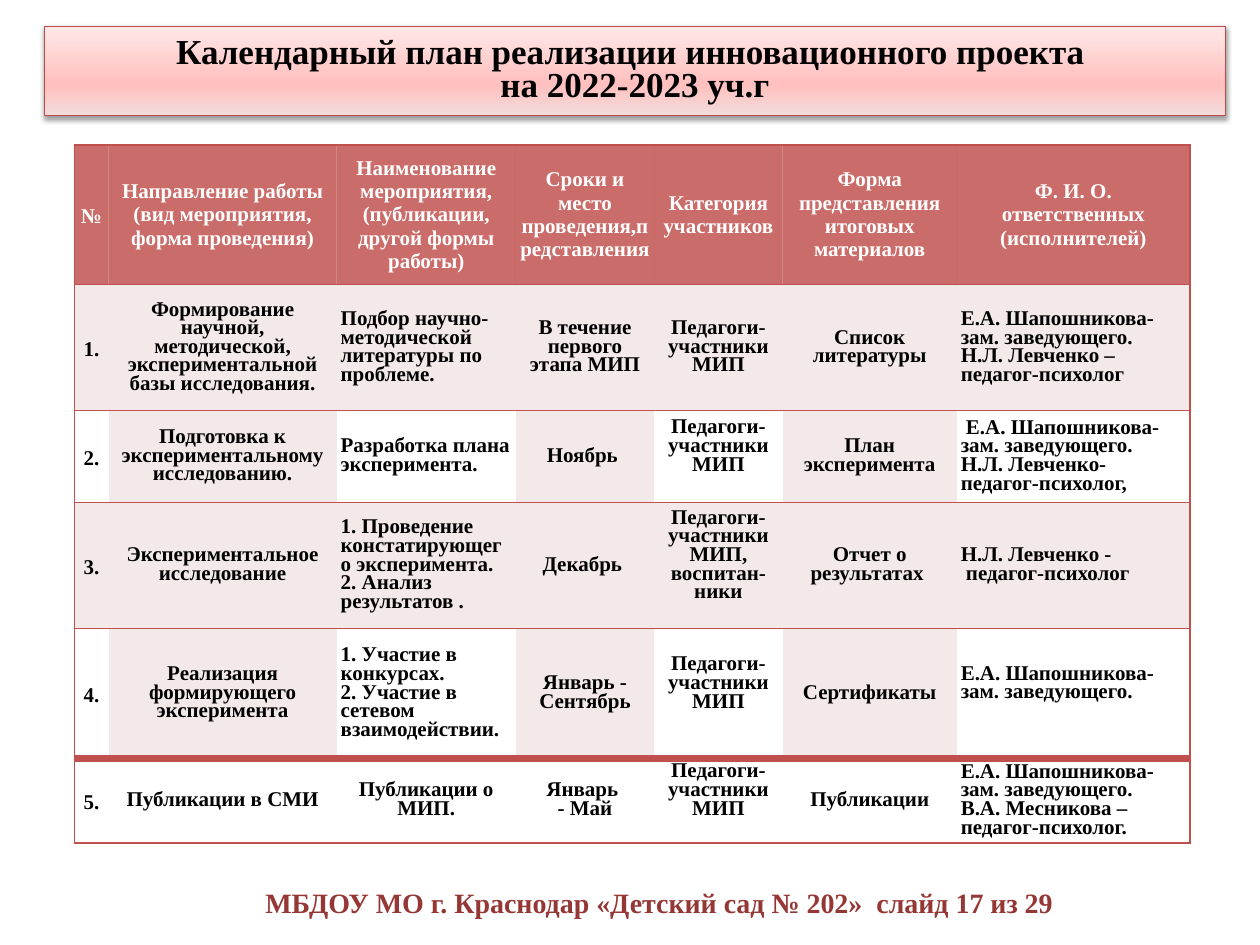
from lxml import etree
from pptx import Presentation
from pptx.dml.color import RGBColor
from pptx.enum.text import MSO_ANCHOR, MSO_AUTO_SIZE, PP_ALIGN
from pptx.oxml import parse_xml
from pptx.oxml.ns import qn
from pptx.util import Cm, Pt

MID = MSO_ANCHOR.MIDDLE
LEFT, CENTER = PP_ALIGN.LEFT, PP_ALIGN.CENTER
FIXED = MSO_AUTO_SIZE.NONE
NS = "http://schemas.openxmlformats.org/drawingml/2006/main"
PLAIN = "{2D5ABB26-0587-4C30-8999-92F81FD0307C}"

THEME = {
    "font": "Times New Roman",
    "title": 20, "cell": 12, "foot": 16,
    "black": "000000", "white": "FFFFFF", "wine": "953735",
    "red": "C0504D", "pink": "F4E9E9", "edge": "BF4C48",
    "glow": [(0, "FFE7E7"), (65, "FFC0BF"), (100, "F2DCDB")],
    "tight": 0.8, "loose": 1.15, "alpha": 84,
}

TITLE = ["Календарный план реализации инновационного проекта ", "на 2022-2023 уч.г"]
FOOT = "МБДОУ МО г. Краснодар «Детский сад № 202»  слайд 17 из 29"
TEAM = "Педагоги- участники МИП"
HEAD = "Е.А. Шапошникова-"
DEPUTY = "зам. заведующего."

ROWS = [
    [["№"],
     ["Направление работы (вид мероприятия, форма проведения)"],
     ["Наименование мероприятия, (публикации, другой формы работы)"],
     ["Сроки и место проведения,представления"],
     ["Категория участников"],
     ["Форма представления итоговых материалов"],
     ["Ф. И. О. ответственных (исполнителей)"]],
    [["1."],
     ["Формирование научной, методической,", "экспериментальной базы исследования."],
     ["Подбор научно-методической литературы по проблеме."],
     ["В течение первого этапа МИП"],
     [TEAM],
     ["Список литературы"],
     [HEAD, DEPUTY, "Н.Л. Левченко –педагог-психолог"]],
    [["2."],
     ["Подготовка к экспериментальному исследованию."],
     ["Разработка плана эксперимента."],
     ["Ноябрь "],
     [TEAM],
     ["План эксперимента"],
     [" " + HEAD, DEPUTY, "Н.Л. Левченко- педагог-психолог,"]],
    [["3."],
     ["Экспериментальное исследование"],
     ["1. Проведение констатирующего эксперимента.", "2. Анализ результатов ."],
     ["Декабрь "],
     ["Педагоги- участники МИП, воспитан-ники"],
     ["Отчет о результатах "],
     ["Н.Л. Левченко -", " педагог-психолог"]],
    [["4."],
     ["Реализация формирующего эксперимента"],
     ["1. Участие в конкурсах.", "2. Участие в сетевом взаимодействии."],
     ["Январь - Сентябрь"],
     [TEAM],
     ["Сертификаты"],
     [HEAD, DEPUTY]],
    [["5."],
     ["Публикации в СМИ"],
     ["Публикации о МИП."],
     ["Январь ", "- Май"],
     [TEAM],
     ["Публикации"],
     [HEAD, DEPUTY, "В.А. Месникова – педагог-психолог."]],
]
WIDTHS = [0.69, 4.6, 3.61, 2.79, 2.59, 3.51, 4.7]
HEIGHTS = [2.82, 2.54, 1.85, 2.54, 2.62, 1.7]
LAST = len(ROWS) - 1
END = len(WIDTHS) - 1
LIFTED = {(2, 4), (3, 4), (4, 4), (5, 4), (4, 6)}
PAD, LIFT = 0.08, 0.39


def color(name):
    return RGBColor.from_string(THEME[name])


def write(frame, lines, size, ink, align, space):
    for i, line in enumerate(lines):
        para = frame.paragraphs[0] if i == 0 else frame.add_paragraph()
        para.alignment = align
        para.line_spacing = space
        run = para.add_run()
        run.text = line
        font = run.font
        font.name, font.size, font.bold = THEME["font"], Pt(THEME[size]), True
        font.color.rgb = color(ink)


def border(cell, side, width):
    props = cell._tc.get_or_add_tcPr()
    line = etree.SubElement(props, qn("a:ln" + side), w=str(Pt(width)))
    if width:
        fill = etree.SubElement(line, qn("a:solidFill"))
        etree.SubElement(fill, qn("a:srgbClr"), val=THEME["red"])
    else:
        etree.SubElement(line, qn("a:noFill"))


def add_title(slide):
    box = slide.shapes.title
    box.left, box.top, box.width, box.height = Cm(0.9), Cm(0.53), Cm(23.8), Cm(1.8)
    stops = "".join(
        f'<a:gs pos="{pos * 1000}"><a:srgbClr val="{tone}"/></a:gs>'
        for pos, tone in THEME["glow"])
    fill = parse_xml(
        f'<a:gradFill xmlns:a="{NS}" rotWithShape="1"><a:gsLst>{stops}</a:gsLst>'
        '<a:lin ang="5400000" scaled="0"/></a:gradFill>')
    shade = parse_xml(
        f'<a:effectLst xmlns:a="{NS}"><a:outerShdw blurRad="{Pt(3.1)}" '
        f'dist="{Pt(1.6)}" dir="5400000" rotWithShape="0">'
        f'<a:srgbClr val="{THEME["black"]}"><a:alpha val="38000"/></a:srgbClr>'
        '</a:outerShdw></a:effectLst>')
    props = box._element.spPr
    etree.SubElement(props, qn("a:prstGeom"), prst="rect")
    props.append(fill)
    box.line.color.rgb = color("edge")
    box.line.width = Pt(0.75)
    props.append(shade)
    frame = box.text_frame
    frame.auto_size, frame.word_wrap = FIXED, True
    frame.vertical_anchor = MID
    write(frame, TITLE, "title", "black", CENTER, THEME["tight"])


def fill_cell(cell, r, c, lines):
    cell.vertical_anchor = MID
    cell.margin_left = cell.margin_right = Cm(PAD)
    cell.margin_top = 0
    cell.margin_bottom = Cm(LIFT if (r, c) in LIFTED else 0)
    border(cell, "L", 1 if c == 0 else 0)
    border(cell, "R", 1 if c == END else 0)
    border(cell, "T", 4 if r == LAST else 1)
    border(cell, "B", 4 if r == LAST - 1 else 1)
    tinted = r < LAST and (r % 2 or c % 2)
    cell.fill.solid()
    cell.fill.fore_color.rgb = color("red" if r == 0 else "pink" if tinted else "white")
    if r == 0:
        tone = cell._tc.tcPr.find(qn("a:solidFill"))[0]
        etree.SubElement(tone, qn("a:alpha"), val=str(THEME["alpha"] * 1000))
    flush = r > 0 and (c == END or c == 2 and r < LAST)
    space = THEME["loose"] if c == 0 else 1.0 if r == 0 else THEME["tight"]
    write(cell.text_frame, lines, "cell", "white" if r == 0 else "black",
          LEFT if flush else CENTER, space)


def add_plan(slide):
    table = slide.shapes.add_table(
        len(ROWS), len(WIDTHS), Cm(1.5), Cm(2.92),
        Cm(sum(WIDTHS)), Cm(sum(HEIGHTS))).table
    table.horz_banding = False
    table._tbl.tblPr.find(qn("a:tableStyleId")).text = PLAIN
    for col, width in zip(table.columns, WIDTHS):
        col.width = Cm(width)
    for r, row in enumerate(ROWS):
        table.rows[r].height = Cm(HEIGHTS[r])
        for c, lines in enumerate(row):
            fill_cell(table.cell(r, c), r, c, lines)


def add_foot(slide):
    frame = slide.shapes.add_textbox(Cm(5.1), Cm(17.73), Cm(19.66), Cm(0.94)).text_frame
    frame.word_wrap = True
    write(frame, [FOOT], "foot", "wine", LEFT, 1.0)


def main():
    deck = Presentation()
    deck.slide_width, deck.slide_height = Cm(25.4), Cm(19.05)
    slide = deck.slides.add_slide(deck.slide_layouts[5])
    add_plan(slide)
    add_title(slide)
    add_foot(slide)
    deck.save("out.pptx")


if __name__ == "__main__":
    main()
